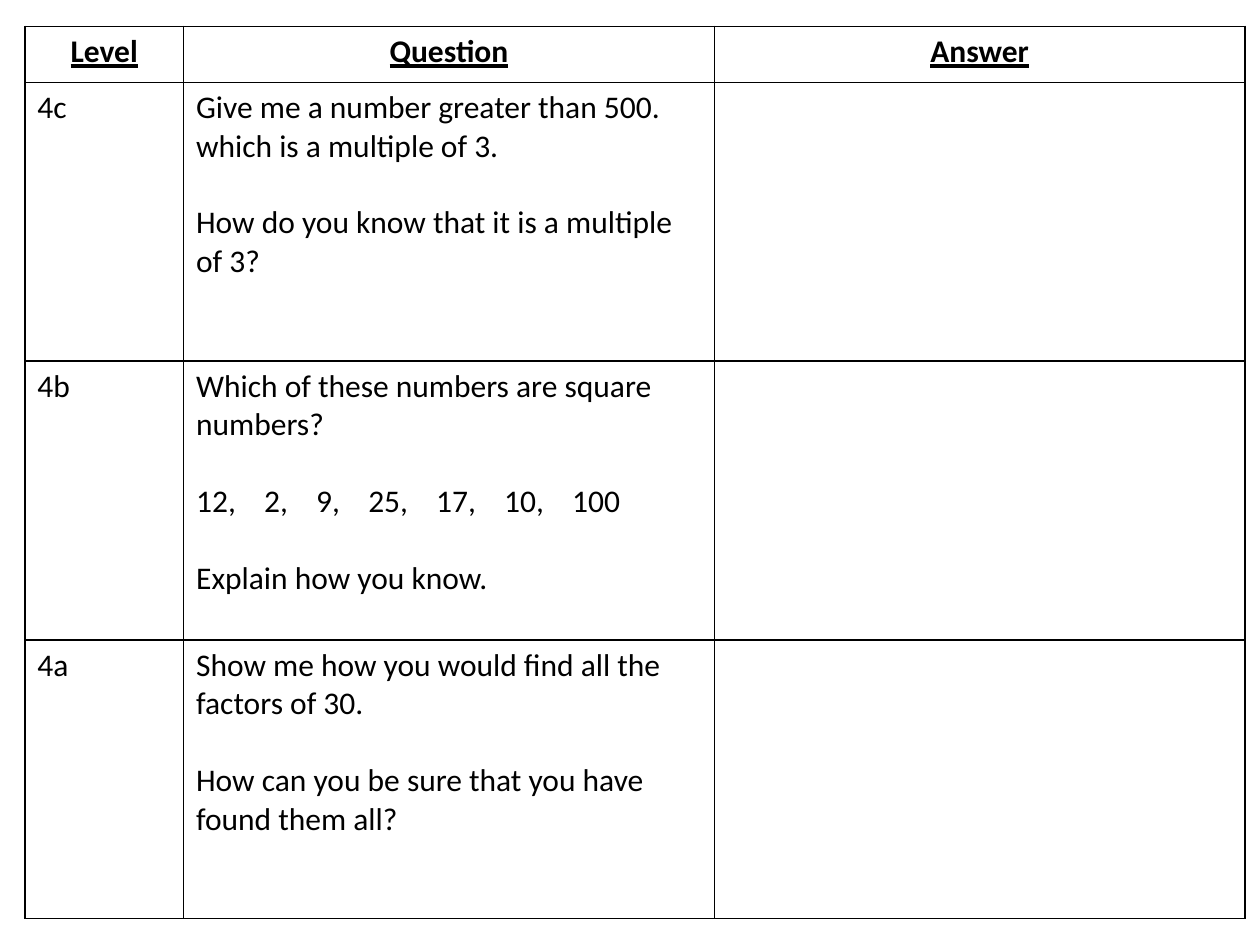
from dataclasses import dataclass

from lxml.etree import SubElement
from pptx import Presentation
from pptx.dml.color import RGBColor
from pptx.enum.text import PP_ALIGN as Align
from pptx.oxml.ns import qn
from pptx.util import Cm, Pt


@dataclass(frozen=True)
class Theme:
    font: str = "Calibri"
    size: int = 18
    ink: str = "000000"
    border: float = 1
    question_gap: float = 22


HEADINGS = ["Level", "Question", "Answer"]
SQUARE_CANDIDATES = ["12,", "2,", "9,", "25,", "17,", "10,", "100"]
QUESTIONS = {
    "4c": ["Give me a number greater than 500. which is a multiple of 3.",
           "How do you know that it is a multiple of 3?"],
    "4b": ["Which of these numbers are square numbers?",
           "\t".join(SQUARE_CANDIDATES),
           "Explain how you know."],
    "4a": ["Show me how you would find all the factors of 30.",
           "How can you be sure that you have found them all?"],
}
COLUMN_WIDTHS = [3.2, 10.7, 10.7]
ROW_HEIGHTS = [1.13] + [5.62] * len(QUESTIONS)
DIGIT_WIDTH, NUMBER_GAP = 0.32, 0.73


def write(paragraph, text, *, theme, bold=False, underline=False,
          align=Align.LEFT, gap=0):
    paragraph.alignment = align
    paragraph.space_before = Pt(gap)
    run = paragraph.add_run()
    run.text = text
    font = run.font
    font.name, font.size = theme.font, Pt(theme.size)
    font.bold, font.underline = bold, underline
    font.color.rgb = RGBColor.from_string(theme.ink)


def set_number_tabs(paragraph, text):
    """Place one tab stop after each number, by its count of digits."""
    stops = SubElement(paragraph._p.get_or_add_pPr(), qn("a:tabLst"))
    position = 0
    for number in text.split("\t")[:-1]:
        position += DIGIT_WIDTH * len(number.rstrip(",")) + NUMBER_GAP
        SubElement(stops, qn("a:tab"), pos=str(Cm(position)), algn="l")


class QuestionSlide:
    def __init__(self, slide, theme):
        self.slide, self.theme = slide, theme

    def table(self, left, top, widths, heights):
        frame = self.slide.shapes.add_table(
            len(heights), len(widths), Cm(left), Cm(top),
            Cm(sum(widths)), Cm(sum(heights)))
        table = frame.table
        table.first_row = table.horz_banding = False
        for column, width in zip(table.columns, widths):
            column.width = Cm(width)
        for row, height in zip(table.rows, heights):
            row.height = Cm(height)
        for cell in table.iter_cells():
            self.border(cell)
            cell.fill.background()
        return table

    def border(self, cell):
        properties = cell._tc.get_or_add_tcPr()
        for side in ("lnL", "lnR", "lnT", "lnB"):
            line = SubElement(properties, qn(f"a:{side}"),
                              w=str(Pt(self.theme.border)))
            fill = SubElement(line, qn("a:solidFill"))
            SubElement(fill, qn("a:srgbClr"), val=self.theme.ink)

    def heading(self, cell, text):
        write(cell.text_frame.paragraphs[0], text, theme=self.theme,
              bold=True, underline=True, align=Align.CENTER)

    def body(self, cell, texts):
        frame = cell.text_frame
        for index, text in enumerate(texts):
            paragraph = frame.add_paragraph() if index else frame.paragraphs[0]
            write(paragraph, text, theme=self.theme,
                  gap=self.theme.question_gap if index else 0)
            if "\t" in text:
                set_number_tabs(paragraph, text)


def main():
    deck = Presentation()
    deck.slide_width, deck.slide_height = Cm(25.4), Cm(19.05)
    blank_layout = deck.slide_layouts[6]
    page = QuestionSlide(deck.slides.add_slide(blank_layout), Theme())

    grid = page.table(0.5, 0.53, COLUMN_WIDTHS, ROW_HEIGHTS)
    for column, heading in enumerate(HEADINGS):
        page.heading(grid.cell(0, column), heading)
    for row, (level, question) in enumerate(QUESTIONS.items(), start=1):
        page.body(grid.cell(row, 0), [level])
        page.body(grid.cell(row, 1), question)

    deck.save("out.pptx")


if __name__ == "__main__":
    main()
